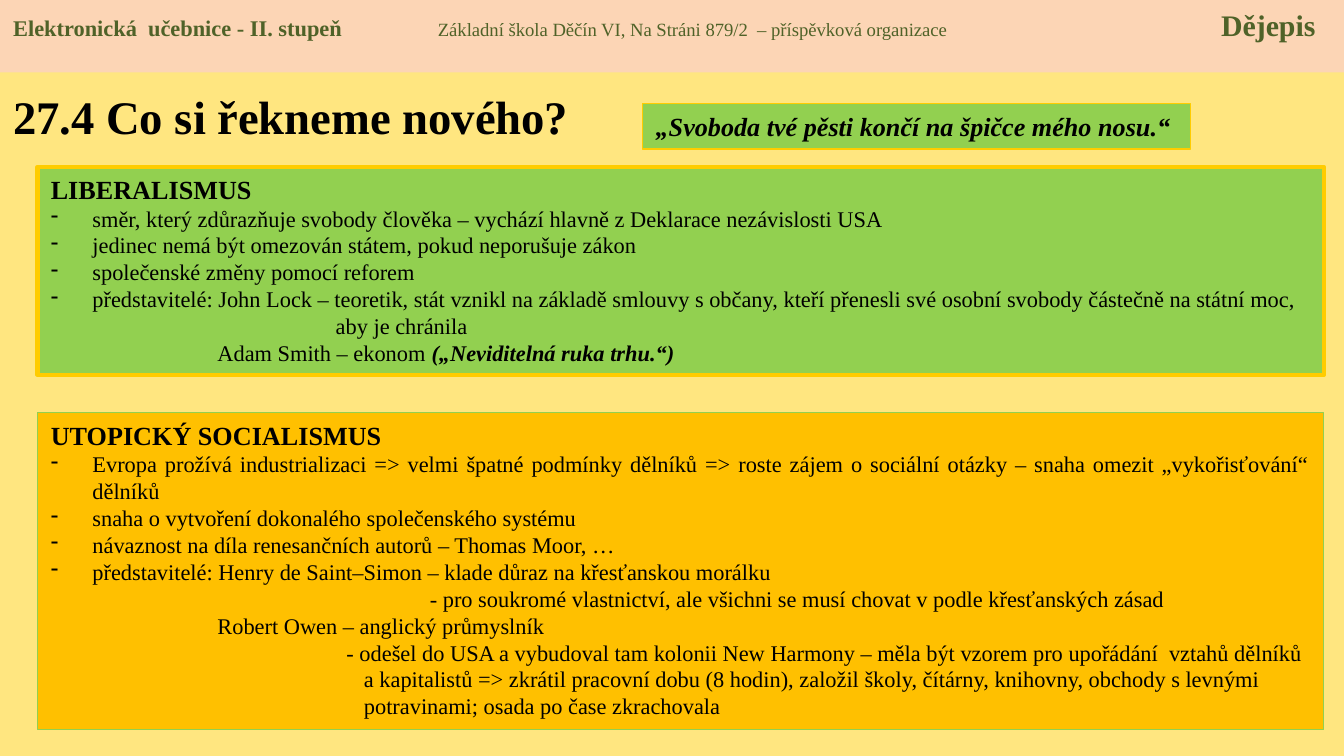
import pptx
import pptx.dml.color
import pptx.enum.shapes
import pptx.enum.text
import pptx.oxml
import pptx.oxml.ns
import pptx.util
from pptx.util import Inches

FONT = "Times New Roman"
COLORS = {
    "background": "FFE680",
    "header": "FCD5B5",
    "header_text": "4F6228",
    "green": "92D050",
    "yellow": "FFCC00",
    "orange": "FFC000",
    "text": "000000",
}
HEADING = {"size": 14, "bold": True}
BODY = {"size": 12}
EMPHASIS = {"size": 12, "bold": True, "italic": True}
BULLET_INDENT = 0.31

# Each line: bullet or not, left indent in inches, runs of (text, format)
LIBERALISM = [
    (False, 0, [("LIBERALISMUS", HEADING)]),
    (True, BULLET_INDENT, [("směr, který zdůrazňuje svobody člověka – vychází hlavně z Deklarace nezávislosti USA", BODY)]),
    (True, BULLET_INDENT, [("jedinec nemá být omezován státem, pokud neporušuje zákon", BODY)]),
    (True, BULLET_INDENT, [("společenské změny pomocí reforem", BODY)]),
    (True, BULLET_INDENT, [("představitelé: John Lock – teoretik, stát vznikl na základě smlouvy s občany, kteří přenesli své osobní svobody částečně na státní moc,", BODY)]),
    (False, 2.12, [("aby je chránila", BODY)]),
    (False, 1.24, [("Adam Smith – ekonom ", BODY), ("(„Neviditelná ruka trhu.“)", EMPHASIS)]),
]
UTOPIAN_SOCIALISM = [
    (False, 0, [("UTOPICKÝ SOCIALISMUS", HEADING)]),
    (True, BULLET_INDENT, [("Evropa prožívá industrializaci => velmi špatné podmínky dělníků => roste zájem o sociální otázky – snaha omezit „vykořisťování“ dělníků", BODY)]),
    (True, BULLET_INDENT, [("snaha o vytvoření dokonalého společenského systému", BODY)]),
    (True, BULLET_INDENT, [("návaznost na díla renesančních autorů – Thomas Moor, …", BODY)]),
    (True, BULLET_INDENT, [("představitelé: Henry de Saint–Simon – klade důraz na křesťanskou morálku", BODY)]),
    (False, 2.82, [("- pro soukromé vlastnictví, ale všichni se musí chovat v podle křesťanských zásad", BODY)]),
    (False, 1.24, [("Robert Owen – anglický průmyslník", BODY)]),
    (False, 2.2, [("- odešel do USA a vybudoval tam kolonii New Harmony – měla být vzorem pro upořádání  vztahů dělníků", BODY)]),
    (False, 2.33, [("a kapitalistů => zkrátil pracovní dobu (8 hodin), založil školy, čítárny, knihovny, obchody s levnými", BODY)]),
    (False, 2.33, [("potravinami; osada po čase zkrachovala", BODY)]),
]


def rgb(name):
    return pptx.dml.color.RGBColor.from_string(COLORS[name])


def add_runs(paragraph, runs, color="text"):
    for text, text_format in runs:
        run = paragraph.add_run()
        run.text = text
        run.font.name = FONT
        run.font.color.rgb = rgb(color)
        values = {"bold": False, "italic": False, **text_format}
        values["size"] = pptx.util.Pt(values["size"])
        for name, value in values.items():
            setattr(run.font, name, value)


def add_property(paragraph, xml):
    """Append a bullet or tab element to the paragraph properties."""
    namespace = pptx.oxml.ns.nsdecls("a")
    element = pptx.oxml.parse_xml(xml.replace("NS", namespace))
    paragraph._p.get_or_add_pPr().append(element)


def add_panel(slide, left, top, width, height, fill, line=None, line_width=0.75):
    """Add a filled rectangle with left-aligned text at its top."""
    panel = slide.shapes.add_shape(
        pptx.enum.shapes.MSO_SHAPE.RECTANGLE,
        Inches(left), Inches(top), Inches(width), Inches(height))
    panel.shadow.inherit = False
    panel.fill.solid()
    panel.fill.fore_color.rgb = rgb(fill)
    if line:
        panel.line.color.rgb = rgb(line)
        panel.line.width = pptx.util.Pt(line_width)
    else:
        panel.line.fill.background()
    frame = panel.text_frame
    frame.word_wrap = True
    frame.vertical_anchor = pptx.enum.text.MSO_ANCHOR.TOP
    frame.paragraphs[0].alignment = pptx.enum.text.PP_ALIGN.LEFT
    return frame


def add_header(slide):
    paragraph = add_panel(slide, 0, 0, 10, 0.54, "header").paragraphs[0]
    add_property(paragraph, f'<a:tabLst NS><a:tab pos="{Inches(3.16)}" algn="l"/>'
                            f'<a:tab pos="{Inches(9.69)}" algn="r"/></a:tabLst>')
    add_runs(paragraph, [
        ("Elektronická  učebnice - II. stupeň\t", {"size": 12, "bold": True}),
        ("Základní škola Děčín VI, Na Stráni 879/2  – příspěvková organizace\t", {"size": 10}),
        ("Dějepis", {"size": 16, "bold": True}),
    ], "header_text")


def add_title(slide, text):
    box = slide.shapes.add_textbox(Inches(0), Inches(0.54), Inches(4.69), Inches(0.65))
    frame = box.text_frame
    frame.word_wrap = True
    frame.vertical_anchor = pptx.enum.text.MSO_ANCHOR.MIDDLE
    add_runs(frame.paragraphs[0], [(text, {"size": 25, "bold": True})])


def add_quote(slide, text):
    frame = add_panel(slide, 4.78, 0.77, 4.08, 0.34, "green", "yellow")
    frame.word_wrap = False
    add_runs(frame.paragraphs[0], [(text, {**HEADING, "italic": True})])


def fill_topic(frame, lines):
    for index, (bulleted, indent, runs) in enumerate(lines):
        paragraph = frame.add_paragraph() if index else frame.paragraphs[0]
        paragraph.alignment = pptx.enum.text.PP_ALIGN.JUSTIFY
        properties = paragraph._p.get_or_add_pPr()
        properties.set("marL", str(Inches(indent)))
        if bulleted:
            properties.set("indent", str(-Inches(indent)))
            add_property(paragraph, "<a:buFontTx NS/>")
            add_property(paragraph, '<a:buChar NS char="-"/>')
        add_runs(paragraph, runs)


def main():
    presentation = pptx.Presentation()
    presentation.slide_width = Inches(10)
    presentation.slide_height = Inches(10) * 9 // 16
    slide = presentation.slides.add_slide(presentation.slide_layouts[6])
    slide.background.fill.solid()
    slide.background.fill.fore_color.rgb = rgb("background")

    add_title(slide, "27.4 Co si řekneme nového?")
    add_header(slide)
    fill_topic(add_panel(slide, 0.28, 1.24, 9.57, 1.55, "green", "yellow", 2.25), LIBERALISM)
    add_quote(slide, "„Svoboda tvé pěsti končí na špičce mého nosu.“")
    fill_topic(add_panel(slide, 0.28, 3.07, 9.57, 2.36, "orange", "green"), UTOPIAN_SOCIALISM)
    presentation.save("out.pptx")


if __name__ == "__main__":
    main()
